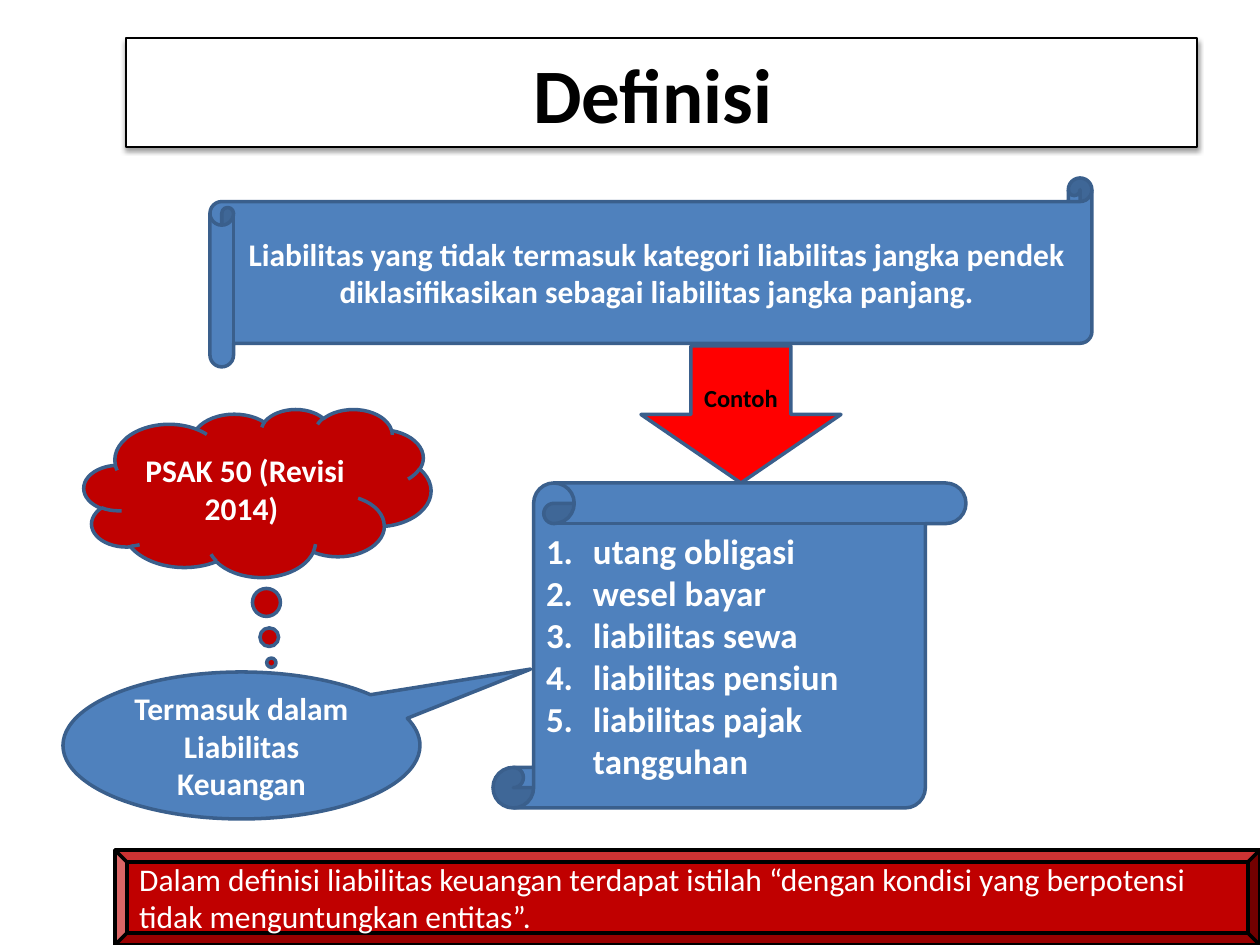
import pptx
import pptx.util
import pptx.dml.color
import pptx.enum.shapes
import pptx.enum.text
import pptx.oxml
import pptx.oxml.ns

SCALE = 914400 / 126
COLORS = {"white": "FFFFFF", "black": "000000", "blue": "4F81BD",
          "edge": "3A5F8C", "red": "FF0000", "dark_red": "C00000"}
KINDS = pptx.enum.shapes.MSO_SHAPE
ALIGN = pptx.enum.text.PP_ALIGN


def px(value):
    return pptx.util.Emu(round(value * SCALE))


def color(name):
    return pptx.dml.color.RGBColor.from_string(COLORS[name])


deck = pptx.Presentation()
deck.slide_width = px(1260)
deck.slide_height = px(945)
page = deck.slides.add_slide(deck.slide_layouts[6])

parts = [
    ("title", KINDS.RECTANGLE, (126, 38, 1071, 109), "white", "black", 0.75,
     ["Definisi "], 44, "black", True, ALIGN.CENTER),
    ("definition", KINDS.HORIZONTAL_SCROLL, (210, 178, 882, 189), "blue", "edge", 2,
     ["Liabilitas yang tidak termasuk kategori liabilitas jangka pendek "
      "diklasifikasikan sebagai liabilitas jangka panjang."],
     18, "white", True, ALIGN.CENTER),
    ("example arrow", KINDS.DOWN_ARROW, (641, 346, 200, 137), "red", "edge", 2,
     ["Contoh"], 14, "black", True, ALIGN.CENTER),
    ("examples", KINDS.VERTICAL_SCROLL, (493, 483, 473, 325), "blue", "edge", 2,
     ["utang obligasi", "wesel bayar", "liabilitas sewa", "liabilitas pensiun",
      "liabilitas pajak tangguhan"], 20, "white", True, ALIGN.LEFT),
    ("standard", KINDS.CLOUD_CALLOUT, (84, 409, 347, 168), "dark_red", "edge", 2,
     ["PSAK 50 (Revisi 2014) "], 18, "white", True, ALIGN.CENTER),
    ("note", KINDS.BEVEL, (115, 850, 1145, 95), "dark_red", "black", 2,
     ["Dalam definisi liabilitas keuangan terdapat istilah “dengan kondisi yang "
      "berpotensi tidak menguntungkan entitas”."],
     18, "white", False, ALIGN.LEFT),
    ("classification", KINDS.OVAL_CALLOUT, (63, 672, 357, 147), "blue", "edge", 2,
     ["Termasuk dalam Liabilitas Keuangan"], 18, "white", True, ALIGN.CENTER),
]

shapes = {}
for name, kind, place, fill, edge, weight, lines, size, ink, bold, align in parts:
    shape = page.shapes.add_shape(kind, *map(px, place))
    shape.shadow.inherit = False
    shape.fill.solid()
    shape.fill.fore_color.rgb = color(fill)
    shape.line.color.rgb = color(edge)
    shape.line.width = pptx.util.Pt(weight)
    frame = shape.text_frame
    frame.word_wrap = True
    frame.vertical_anchor = pptx.enum.text.MSO_ANCHOR.MIDDLE
    for index, line in enumerate(lines):
        para = frame.add_paragraph() if index else frame.paragraphs[0]
        para.text = line
        para.alignment = align
        if name == "examples":
            props = para._p.get_or_add_pPr()
            props.set("marL", str(px(47)))
            props.set("indent", str(-px(47)))
            props.append(pptx.oxml.parse_xml(
                f'<a:buAutoNum {pptx.oxml.ns.nsdecls("a")} type="arabicPeriod"/>'))
        para.font.name = "Calibri"
        para.font.size = pptx.util.Pt(size)
        para.font.bold = bold
        para.font.color.rgb = color(ink)
    shapes[name] = shape

for name, tip in {"standard": (0.04, 1.01), "classification": (0.81, -0.52)}.items():
    for index, value in enumerate(tip):
        shapes[name].adjustments[index] = value

effects = shapes["title"]._element.spPr.find(pptx.oxml.ns.qn("a:effectLst"))
effects.append(pptx.oxml.parse_xml(
    f'<a:outerShdw {pptx.oxml.ns.nsdecls("a")} blurRad="40000" dist="20000" '
    f'dir="5400000" rotWithShape="0"><a:srgbClr val="{COLORS["black"]}">'
    '<a:alpha val="38000"/></a:srgbClr></a:outerShdw>'))

deck.save("out.pptx")
